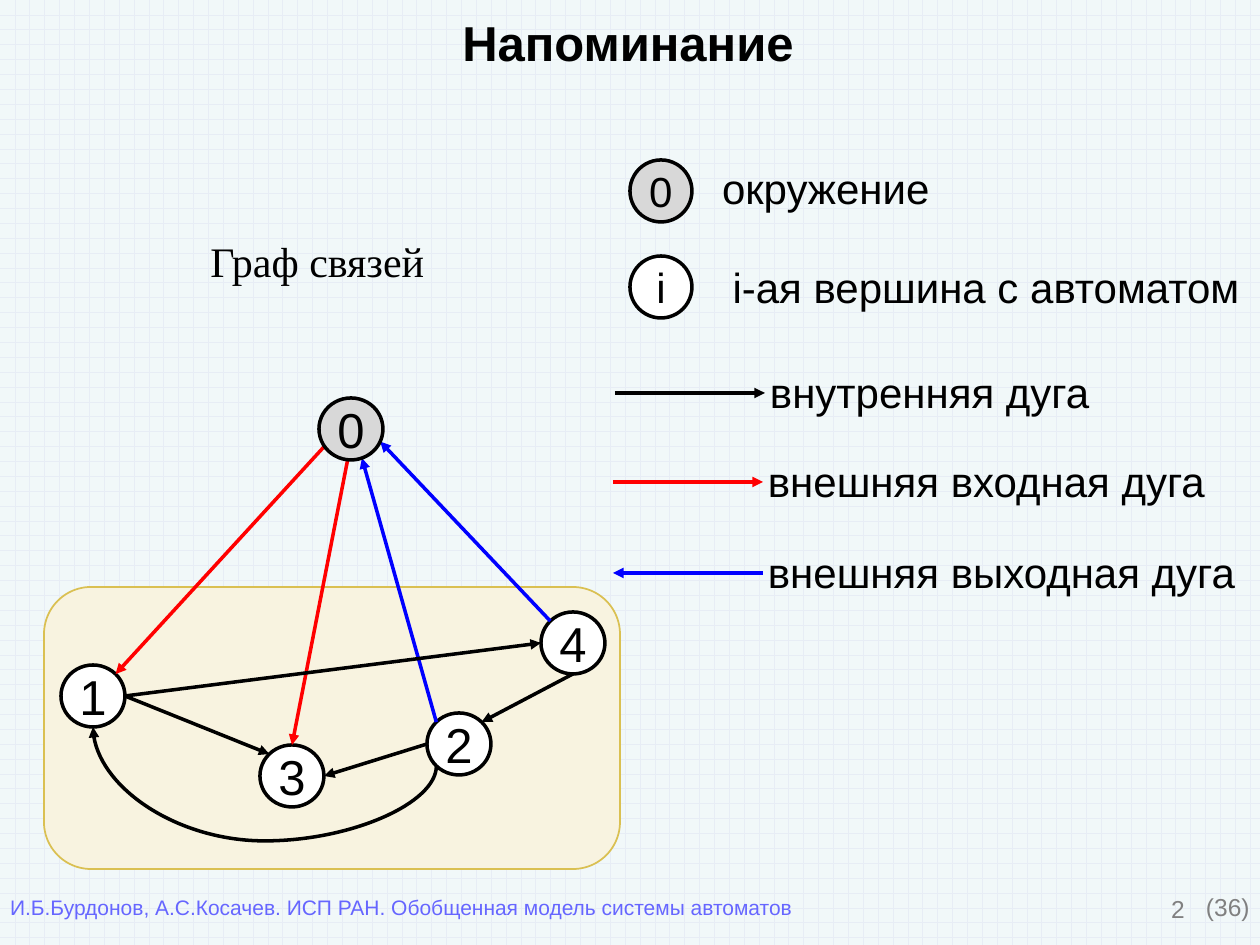
from dataclasses import dataclass
from math import cos, radians, sin

from lxml.etree import SubElement
from pptx import Presentation
from pptx.dml.color import RGBColor
from pptx.enum.dml import MSO_PATTERN
from pptx.enum.shapes import MSO_CONNECTOR, MSO_SHAPE
from pptx.enum.text import MSO_ANCHOR, MSO_AUTO_SIZE, PP_ALIGN
from pptx.oxml.ns import qn
from pptx.util import Emu, Pt


@dataclass(frozen=True)
class Theme:
    font: str = "Arial"
    serif: str = "Times New Roman"
    ink: str = "000000"
    white: str = "FFFFFF"
    grey: str = "D8D8D8"
    red: str = "FF0000"
    blue: str = "0000FF"
    muted: str = "808080"
    credit: str = "6666FF"
    panel: str = "F8F3E0"
    edge: str = "DAC052"
    grid: str = "E7EDF5"
    back: str = "F1F8F9"
    big: int = 28
    body: int = 24
    page: int = 14
    small: int = 12


T = Theme()
LEFT, MID, RIGHT = PP_ALIGN.LEFT, PP_ALIGN.CENTER, PP_ALIGN.RIGHT
NODE = (64, 62)
NODES = {"1": (61, 665), "2": (427, 713), "3": (260, 745), "4": (541, 612), "0": (319, 398)}
# Each edge: start node, angle, end node, angle, colour; angles run clockwise from east
EDGES = [
    ("0", 146, "1", -45, T.red),
    ("0", 96, "3", -90, T.red),
    ("2", -135, "0", 70, T.blue),
    ("4", -135, "0", 24, T.blue),
    ("1", 0, "3", -135, T.ink),
    ("1", 0, "4", 180, T.ink),
    ("4", 90, "2", -45, T.ink),
    ("2", 180, "3", 0, T.ink),
]


def px(*vals):
    return [Emu(round(v * 914400 / 126)) for v in vals]


def rgb(code):
    return RGBColor.from_string(code)


def write(frame, words, size=T.body, color=T.ink, font=T.font, bold=False,
          align=LEFT, anchor=MSO_ANCHOR.MIDDLE, inset=(0, 0), wrap=False, space=None):
    frame.word_wrap = wrap
    frame.vertical_anchor = anchor
    frame.margin_left = frame.margin_right = px(inset[0])[0]
    frame.margin_top = frame.margin_bottom = px(inset[1])[0]
    para = frame.paragraphs[0]
    para.alignment = align
    if space:
        para.line_spacing = space
    run = para.add_run()
    run.text = words
    run.font.size, run.font.name, run.font.bold = Pt(size), font, bold
    run.font.color.rgb = rgb(color)


def label(pool, words, rect, **form):
    frame = pool.add_textbox(*px(*rect)).text_frame
    write(frame, words, **form)
    frame.auto_size = MSO_AUTO_SIZE.SHAPE_TO_FIT_TEXT


def shape(pool, kind, rect, fill, line, width):
    item = pool.add_shape(kind, *px(*rect))
    item.shadow.inherit = False
    item.fill.solid()
    item.fill.fore_color.rgb = rgb(fill)
    item.line.color.rgb = rgb(line)
    item.line.width = Pt(width)
    return item


def node(pool, name, spot, size=NODE, point=T.big):
    fill = T.grey if name == "0" else T.white
    item = shape(pool, MSO_SHAPE.OVAL, (*spot, *size), fill, T.ink, 2)
    write(item.text_frame, name, size=point, align=MID, wrap=True)


def arrow(pool, start, end, color=T.ink, kind=MSO_CONNECTOR.STRAIGHT):
    item = pool.add_connector(kind, *px(*start, *end))
    item.line.color.rgb = rgb(color)
    item.line.width = Pt(2)
    SubElement(item.line._get_or_add_ln(), qn("a:tailEnd"), type="triangle")
    SubElement(item._element.spPr, qn("a:effectLst"))
    return item


def site(name, angle):
    """Point on a node's rim."""
    (x, y), (w, h) = NODES[name], NODE
    turn = radians(angle)
    return x + w / 2 * (1 + cos(turn)), y + h / 2 * (1 + sin(turn))


def loop(pool, start, end, dip):
    """Curve that leaves downward, sags below both ends and comes up."""
    (ax, ay), (bx, by) = start, end
    cx, cy = (ax + bx) / 2, (ay + by) / 2
    dx, dy = (ay - by) / 2, (ax - bx) / 2
    # Laid out upright, then turned a quarter back
    item = arrow(pool, (cx - dx, cy + dy), (cx + dx, cy - dy), kind=MSO_CONNECTOR.CURVE)
    props = item._element.spPr
    props.find(qn("a:xfrm")).set("rot", "16200000")
    ratio = round(-dip / (2 * dx) * 100000)
    SubElement(props.find(qn("a:prstGeom")).find(qn("a:avLst")), qn("a:gd"),
               name="adj1", fmla=f"val {ratio}")


def legend(pool):
    # Node kinds
    for name, words, top, rect, align in (
        ("0", "окружение", 160, (717, 163, 219, 50), LEFT),
        ("i", "i-ая вершина с автоматом", 256, (717, 262, 538, 50), MID),
    ):
        part = pool.add_group_shape().shapes
        label(part, words, rect, inset=(5, 0), align=align, wrap=align == MID)
        node(part, name, (630, top), (62, 62), T.body)
    # Edge kinds
    for words, color, x, y, wide, back in (
        ("внутренняя дуга", T.ink, 615, 393, 333, False),
        ("внешняя входная дуга", T.red, 613, 482, 451, False),
        ("внешняя выходная дуга", T.blue, 613, 573, 481, True),
    ):
        part = pool.add_group_shape().shapes
        ends = [(x, y), (x + 150, y)]
        arrow(part, *(reversed(ends) if back else ends), color)
        label(part, words, (x + 150, y - 26, wide, 50), inset=(5, 0))


def graph(pool):
    label(pool, "Граф связей", (198, 204, 242, 89), font=T.serif, space=1.5,
          anchor=MSO_ANCHOR.TOP, inset=(12.6, 6.3))
    shape(pool, MSO_SHAPE.ROUNDED_RECTANGLE, (44, 587, 576, 282), T.panel, T.edge, 1)
    for name in "1234":
        node(pool, name, NODES[name])
    for a, out, b, into, color in EDGES:
        arrow(pool, site(a, out), site(b, into), color)
    loop(pool, site("2", 135), site("1", 90), 75)
    node(pool, "0", NODES["0"])


def main():
    deck = Presentation()
    deck.slide_width, deck.slide_height = px(1260, 945)
    slide = deck.slides.add_slide(deck.slide_layouts[6])
    pool = slide.shapes

    # Background
    fill = slide.background.fill
    fill.patterned()
    fill.pattern = MSO_PATTERN.HORIZONTAL_BRICK
    fill.fore_color.rgb, fill.back_color.rgb = rgb(T.grid), rgb(T.back)

    # Footer and title
    label(pool, "2", (903, 888, 294, 66), size=T.page, color=T.muted, align=RIGHT,
          anchor=MSO_ANCHOR.TOP, inset=(12.6, 6.3), wrap=True)
    label(pool, "(36)", (1206, 892, 44, 29), size=T.page, color=T.muted,
          anchor=MSO_ANCHOR.TOP)
    label(pool, "И.Б.Бурдонов, А.С.Косачев. ИСП РАН. Обобщенная модель системы автоматов",
          (10, 895, 790, 25), size=T.small, color=T.credit, anchor=MSO_ANCHOR.TOP)
    label(pool, "Напоминание", (25, 0, 1206, 84), size=T.big, bold=True, align=MID,
          inset=(12.6, 12.6), wrap=True)

    legend(pool)
    graph(pool)
    deck.save("out.pptx")


if __name__ == "__main__":
    main()
